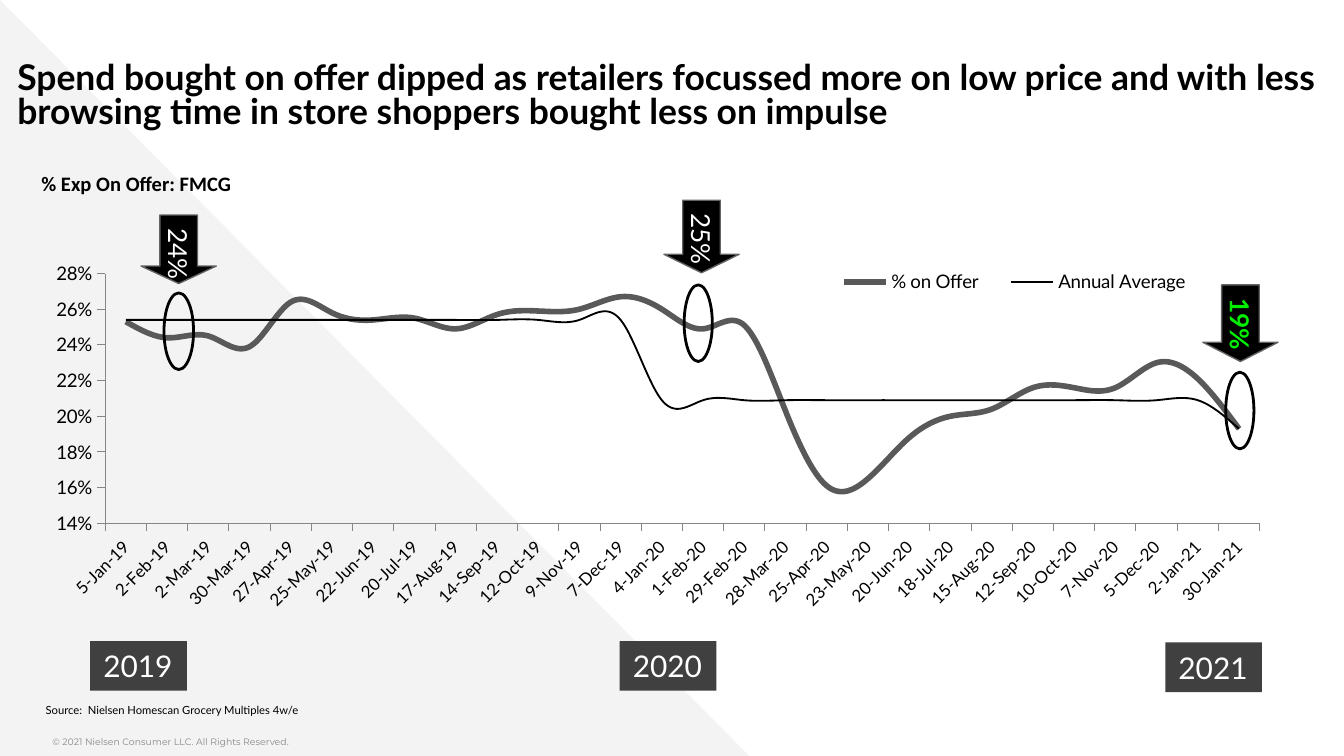
from typing import NamedTuple

from lxml import etree
from pptx import Presentation
from pptx.chart.data import CategoryChartData
from pptx.dml.color import RGBColor
from pptx.enum import chart as ch, shapes, text
from pptx.oxml import parse_xml
from pptx.oxml.ns import nsdecls, qn
from pptx.util import Inches, Pt

COLORS = {
    "black": "000000", "white": "FFFFFF", "green": "00F000", "offer": "595959",
    "edge": "616365", "year": "404040", "axis": "868686", "triangle": "F3F3F3",
    "copyright": "888888",
}
FONT = "Lato"
DATE_FORMAT = "d-mmm-yy"
FIRST_PERIOD = 43470  # serial day number of 5-Jan-19
ON_OFFER = [
    0.253, 0.244, 0.245, 0.239, 0.264, 0.258, 0.254, 0.255, 0.249, 0.257,
    0.259, 0.26, 0.267, 0.26, 0.249, 0.251, 0.203, 0.161, 0.165, 0.188,
    0.2, 0.204, 0.216, 0.216, 0.216, 0.23, 0.221, 0.193,
]
ANNUAL_AVERAGE = [0.254] * 13 + [0.209] * 14 + [0.193]
PERIODS = [FIRST_PERIOD + 28 * i for i in range(len(ON_OFFER))]


class Box(NamedTuple):
    left: float
    top: float
    width: float
    height: float

    def emu(self):
        return [Inches(v) for v in self]


class Callout(NamedTuple):
    label: str
    arrow: Box
    ring: Box
    color: str = "white"
    bold: bool = False


class Year(NamedTuple):
    label: str
    left: float
    top: float


CALLOUTS = [
    Callout("24%", Box(1.05, 1.6, 0.56, 0.51), Box(1.22, 2.18, 0.22, 0.57)),
    Callout("25%", Box(4.94, 1.49, 0.56, 0.54), Box(5.09, 2.12, 0.21, 0.57)),
    Callout("19%", Box(8.95, 2.12, 0.56, 0.57), Box(9.12, 2.77, 0.21, 0.57), "green", True),
]
YEARS = [Year("2019", 0.67, 4.77), Year("2020", 4.61, 4.77), Year("2021", 8.67, 4.78)]


def rgb(name: str) -> RGBColor:
    return RGBColor.from_string(COLORS[name])


def style_font(font, size: float, color="black", name=FONT, bold=False) -> None:
    font.size, font.name, font.bold = Pt(size), name, bold
    font.color.rgb = rgb(color)


def write(sp, content: str, size: float, color="black", name=FONT, bold=False,
          align=text.PP_ALIGN.LEFT, anchor=text.MSO_ANCHOR.TOP, wrap=False,
          margins=(0.1, 0.05, 0.1, 0.05), spacing=None) -> None:
    tf = sp.text_frame
    tf.word_wrap, tf.vertical_anchor = wrap, anchor
    tf.margin_left, tf.margin_top, tf.margin_right, tf.margin_bottom = map(Inches, margins)
    p = tf.paragraphs[0]
    p.alignment, p.line_spacing = align, spacing
    r = p.add_run()
    r.text = content
    style_font(r.font, size, color, name, bold)


def add_text(slide, box: Box, content: str, size: float, **fmt) -> None:
    write(slide.shapes.add_textbox(*box.emu()), content, size, **fmt)


def add_shape(slide, kind, box: Box, fill=None, line=None, line_width=1.0):
    sp = slide.shapes.add_shape(kind, *box.emu())
    sp.shadow.inherit = False
    if fill:
        sp.fill.solid()
        sp.fill.fore_color.rgb = rgb(fill)
    else:
        sp.fill.background()
    if line:
        sp.line.color.rgb = rgb(line)
        sp.line.width = Pt(line_width)
    else:
        sp.line.fill.background()
    return sp


def add_callout(slide, callout: Callout) -> None:
    add_shape(slide, shapes.MSO_SHAPE.OVAL, callout.ring, line="black", line_width=1.5)
    sp = add_shape(slide, shapes.MSO_SHAPE.DOWN_ARROW, callout.arrow, "black", "edge", 0.75)
    sp.adjustments[0], sp.adjustments[1] = 0.5, 0.255
    write(sp, callout.label, 14, color=callout.color, bold=callout.bold,
          align=text.PP_ALIGN.CENTER, anchor=text.MSO_ANCHOR.MIDDLE)
    sp.text_frame._txBody.find(qn("a:bodyPr")).set("vert", "eaVert")


def add_year(slide, year: Year) -> None:
    sp = add_shape(slide, shapes.MSO_SHAPE.RECTANGLE, Box(year.left, year.top, 0.72, 0.37), "year")
    write(sp, year.label, 16, color="white", anchor=text.MSO_ANCHOR.MIDDLE)


def set_layout(parent, index: int, box: Box, inner=False) -> None:
    """Place a chart part by hand, in fractions of the chart area."""
    for old in parent.findall(qn("c:layout")):
        parent.remove(old)
    layout = parse_xml(f"<c:layout {nsdecls('c')}><c:manualLayout/></c:layout>")
    settings = [("layoutTarget", "inner")] if inner else []
    settings += [("xMode", "edge"), ("yMode", "edge"), *zip("xywh", box)]
    for tag, value in settings:
        etree.SubElement(layout[0], qn(f"c:{tag}")).set("val", str(value))
    parent.insert(index, layout)


def style_axis(axis, size: float, number_format: str) -> None:
    axis.has_major_gridlines = False
    axis.major_tick_mark = ch.XL_TICK_MARK.OUTSIDE
    axis.format.line.color.rgb = rgb("axis")
    axis.format.line.width = Pt(0.5)
    axis.tick_labels.number_format = number_format
    axis.tick_labels.number_format_is_linked = False
    style_font(axis.tick_labels.font, size)


def add_offer_chart(slide) -> None:
    data = CategoryChartData(number_format="0%")
    data.categories = PERIODS
    data.categories.number_format = DATE_FORMAT
    data.add_series("% on Offer", ON_OFFER)
    data.add_series("Annual Average", ANNUAL_AVERAGE)
    chart = slide.shapes.add_chart(
        ch.XL_CHART_TYPE.LINE, *Box(0.32, 1.87, 9.45, 3.25).emu(), data).chart
    chart.has_title = False
    style_font(chart.font, 18, name="Arial")
    chart.plots[0].vary_by_categories = False
    for series, color, width in zip(chart.plots[0].series, ("offer", "black"), (3, 1)):
        series.smooth = True
        series.marker.style = ch.XL_MARKER_STYLE.NONE
        series.format.line.color.rgb = rgb(color)
        series.format.line.width = Pt(width)

    periods = chart.category_axis
    style_axis(periods, 9, DATE_FORMAT)
    periods.tick_label_position = ch.XL_TICK_LABEL_POSITION.LOW
    for auto in periods._element.findall(qn("c:auto")):
        auto.set("val", "0")
    body = periods._element.find(qn("c:txPr")).find(qn("a:bodyPr"))
    body.set("rot", "-2700000")
    body.set("vert", "horz")
    values = chart.value_axis
    style_axis(values, 10, "0%")
    values.minimum_scale, values.maximum_scale, values.major_unit = 0.14, 0.28, 0.02

    chart.has_legend = True
    legend = chart.legend
    legend.position = ch.XL_LEGEND_POSITION.RIGHT
    legend.include_in_layout = False
    style_font(legend.font, 10)
    set_layout(legend._element, 1, Box(0.61, 0.03, 0.31, 0.08))
    set_layout(chart._chartSpace.chart.plotArea, 0, Box(0.049, 0.051, 0.909, 0.572), inner=True)


def main() -> None:
    prs = Presentation()
    prs.slide_width, prs.slide_height = Inches(10), Inches(5.625)
    slide = prs.slides.add_slide(prs.slide_layouts[5])

    triangle = add_shape(slide, shapes.MSO_SHAPE.RIGHT_TRIANGLE, Box(0, 0, 5.59, 5.64), "triangle")
    slide.shapes._spTree.insert(2, triangle._element)  # behind the title
    title = slide.shapes.title
    title.left, title.top, title.width, title.height = Box(0.13, 0.37, 9.91, 0.69).emu()
    write(title, "Spend bought on offer dipped as retailers focussed more on low price and with "
          "less browsing time in store shoppers bought less on impulse", 19, bold=True,
          wrap=True, margins=(0, 0.1, 0, 0.1), spacing=0.8)
    title.text_frame.auto_size = text.MSO_AUTO_SIZE.NONE

    add_offer_chart(slide)
    for callout in CALLOUTS:
        add_callout(slide, callout)
    for year in YEARS:
        add_year(slide, year)
    add_text(slide, Box(0.21, 1.22, 1.67, 0.29), "% Exp On Offer: FMCG", 11,
             name="Calibri", bold=True)
    add_text(slide, Box(0.22, 5.15, 5, 0.57), "Source:  Nielsen Homescan Grocery Multiples 4w/e", 6,
             wrap=True, margins=(0.12, 0.16, 0, 0.1))
    add_text(slide, Box(0.39, 5.43, 5.54, 0.2), "© 2021 Nielsen Consumer LLC. All Rights Reserved.",
             5, color="copyright", name="Montserrat", wrap=True, margins=(0, 0.05, 0, 0.05))
    prs.save("out.pptx")


if __name__ == "__main__":
    main()
